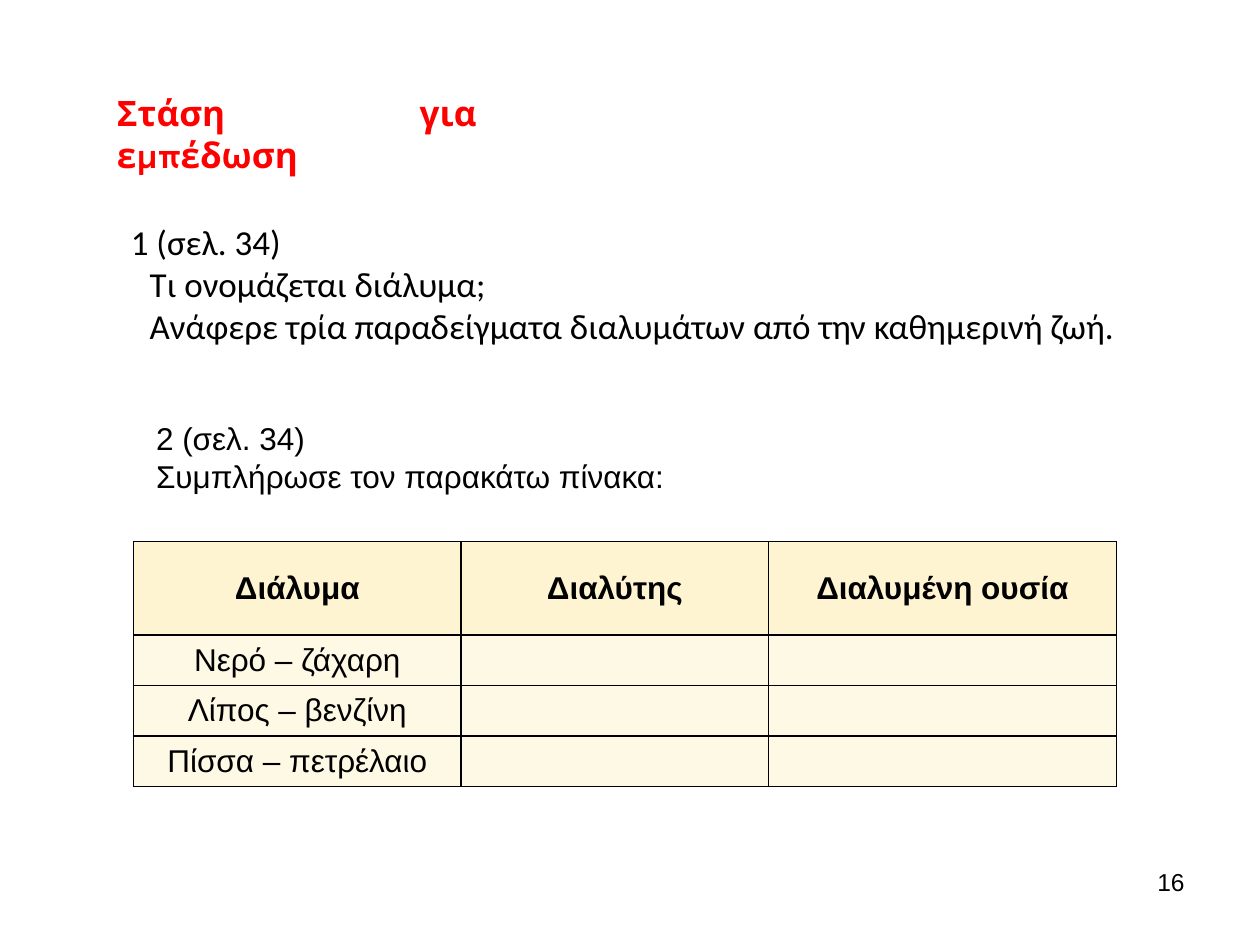
from dataclasses import dataclass

import lxml.etree
import pptx
import pptx.dml.color
import pptx.enum.text
import pptx.oxml.ns
import pptx.util

RGBColor = pptx.dml.color.RGBColor
BLACK = RGBColor(0x00, 0x00, 0x00)
RED = RGBColor(0xFF, 0x00, 0x00)
HEADER_CREAM = RGBColor(0xFE, 0xF4, 0xD2)
BODY_CREAM = RGBColor(0xFE, 0xF9, 0xE5)

ALIGN = pptx.enum.text.PP_ALIGN
SLIDE_WIDTH = pptx.util.Inches(10)
SLIDE_HEIGHT = pptx.util.Inches(7.5)


@dataclass(frozen=True)
class Area:
    """Left, top, width and height in percent of the slide."""
    left: float
    top: float
    width: float
    height: float

    def lengths(self) -> tuple[int, int, int, int]:
        return (across(self.left), down(self.top), across(self.width), down(self.height))


@dataclass(frozen=True)
class Line:
    text: str
    indent: float = 0  # percent of the slide width


@dataclass(frozen=True)
class TextBlock:
    area: Area
    lines: tuple[Line, ...]
    font: dict
    align: ALIGN = ALIGN.LEFT


def across(percent: float) -> int:
    return round(SLIDE_WIDTH * percent / 100)


def down(percent: float) -> int:
    return round(SLIDE_HEIGHT * percent / 100)


def font_format(name: str, size: float, bold: bool = False) -> dict:
    return {"name": name, "size": pptx.util.Pt(size), "bold": bold}


def write(paragraph, text: str, font: dict, color: RGBColor, align: ALIGN) -> None:
    paragraph.alignment = align
    run = paragraph.add_run()
    run.text = text
    for attribute, value in font.items():
        setattr(run.font, attribute, value)
    run.font.color.rgb = color


def draw_text(slide, block: TextBlock, color: RGBColor = BLACK) -> None:
    frame = slide.shapes.add_textbox(*block.area.lengths()).text_frame
    frame.word_wrap = True
    for index, line in enumerate(block.lines):
        paragraph = frame.add_paragraph() if index else frame.paragraphs[0]
        write(paragraph, line.text, block.font, color, block.align)
        if line.indent:
            paragraph._p.get_or_add_pPr().set("marL", str(across(line.indent)))


def add_borders(cell, color: RGBColor, points: float) -> None:
    properties = cell._tc.get_or_add_tcPr()
    qn = pptx.oxml.ns.qn
    for side in ("a:lnL", "a:lnR", "a:lnT", "a:lnB"):
        border = lxml.etree.SubElement(properties, qn(side), w=str(pptx.util.Pt(points)))
        fill = lxml.etree.SubElement(border, qn("a:solidFill"))
        lxml.etree.SubElement(fill, qn("a:srgbClr"), val=str(color))


def draw_table(slide, area: Area, columns: tuple[float, ...], rows: tuple[float, ...],
               headings: tuple[str, ...], solutions: tuple[str, ...]) -> None:
    table = slide.shapes.add_table(len(rows), len(columns), *area.lengths()).table
    for column, share in zip(table.columns, columns):
        column.width = across(share)
    for row, share in zip(table.rows, rows):
        row.height = down(share)
    contents = [headings] + [(solution, "", "") for solution in solutions]
    for row_index, texts in enumerate(contents):
        is_header = row_index == 0
        for column_index, text in enumerate(texts):
            cell = table.cell(row_index, column_index)
            add_borders(cell, BLACK, 1)
            cell.fill.solid()
            cell.fill.fore_color.rgb = HEADER_CREAM if is_header else BODY_CREAM
            cell.vertical_anchor = pptx.enum.text.MSO_ANCHOR.MIDDLE
            if text:
                write(cell.text_frame.paragraphs[0], text,
                      font_format("Arial", 18, is_header), BLACK, ALIGN.CENTER)


TITLE = TextBlock(Area(8.3, 9.07, 30.5, 5.87), (Line("Στάση για εμπέδωση"),),
                  font_format("Karla", 20, True), ALIGN.JUSTIFY)
FIRST_QUESTION = TextBlock(
    Area(5.9, 22.67, 87.4, 14.8),
    (Line("1 (σελ. 34)", 3.5),
     Line("Τι ονομάζεται διάλυμα;", 5),
     Line("Ανάφερε τρία παραδείγματα διαλυμάτων από την καθημερινή ζωή.", 5)),
    font_format("Calibri", 20), ALIGN.JUSTIFY)
SECOND_QUESTION = TextBlock(
    Area(11.4, 43.73, 44, 9.47),
    (Line("2 (σελ. 34)"), Line("Συμπλήρωσε τον παρακάτω πίνακα:")),
    font_format("Arial", 18))
PAGE_NUMBER = TextBlock(Area(71.7, 91.07, 23.3, 6.93), (Line("16"),),
                        font_format("Arial", 14), ALIGN.RIGHT)


def main() -> None:
    presentation = pptx.Presentation()
    presentation.slide_width = SLIDE_WIDTH
    presentation.slide_height = SLIDE_HEIGHT
    slide = presentation.slides.add_slide(presentation.slide_layouts[6])

    # Page number, heading and questions
    draw_text(slide, PAGE_NUMBER)
    draw_text(slide, TITLE, RED)
    draw_text(slide, FIRST_QUESTION)
    draw_text(slide, SECOND_QUESTION)

    # Table of solutions to fill in
    draw_table(slide, Area(10.6, 57.33, 78, 25.87),
               columns=(26, 24.4, 27.6), rows=(9.87,) + (5.33,) * 3,
               headings=("Διάλυμα", "Διαλύτης", "Διαλυμένη ουσία"),
               solutions=("Νερό – ζάχαρη", "Λίπος – βενζίνη", "Πίσσα – πετρέλαιο"))

    presentation.save("out.pptx")


if __name__ == "__main__":
    main()
